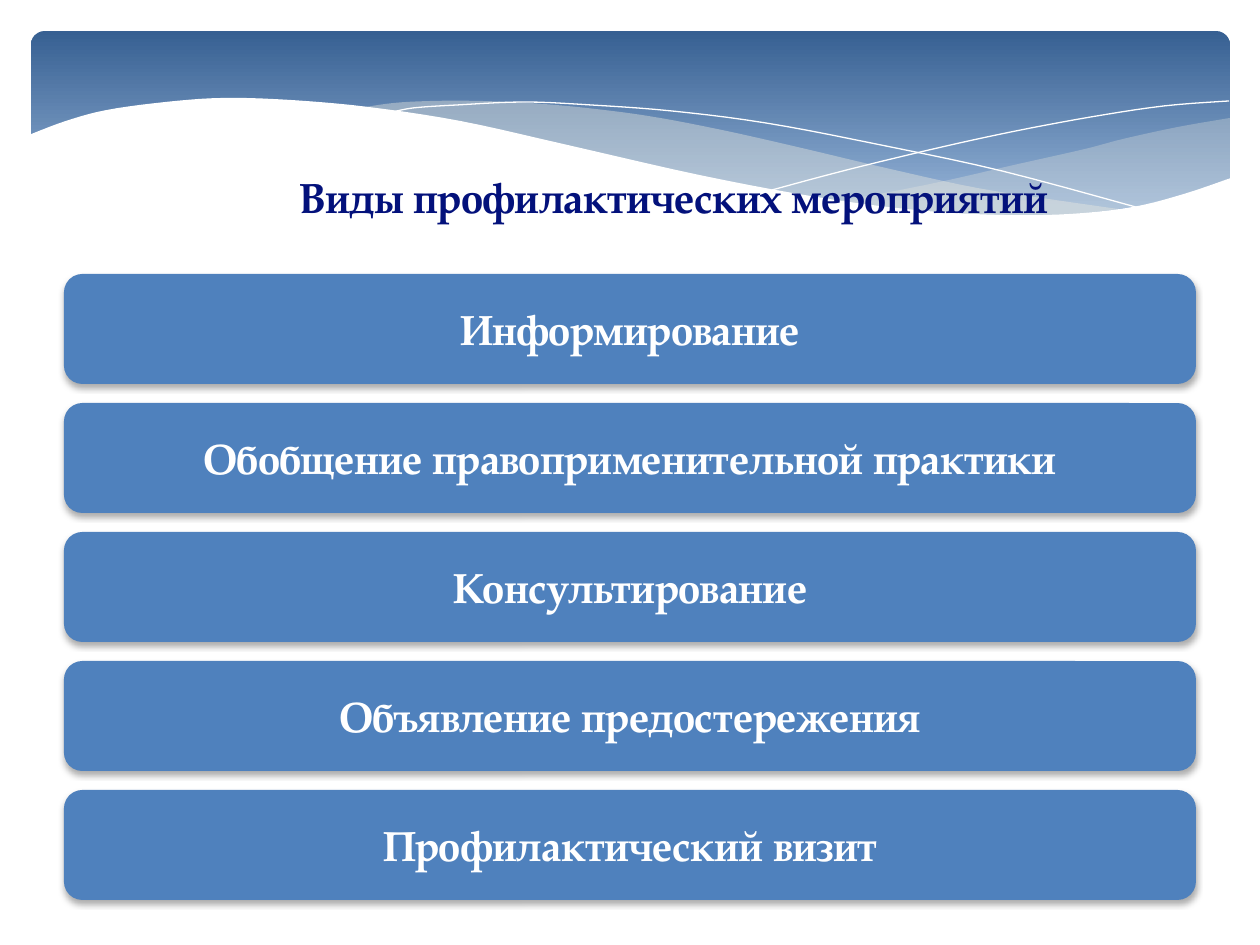
from lxml.etree import SubElement
from pptx import Presentation
from pptx.dml.color import RGBColor
from pptx.enum.shapes import MSO_SHAPE
from pptx.enum.text import MSO_ANCHOR, PP_ALIGN
from pptx.oxml.ns import qn
from pptx.util import Pt

EMU_PER_PX = 914400 / 126
FONT = "TeX Gyre Pagella"
WHITE, NAVY, BLUE, CREAM = "FFFFFF", "03117B", "4F81BD", "EEECE1"
BAND_TOP, BAND_BOTTOM = "376092", "95B3D7"

TITLE = "Виды профилактических мероприятий"
MEASURES = [
    "Информирование",
    "Обобщение правоприменительной практики",
    "Консультирование",
    "Объявление предостережения",
    "Профилактический визит",
]
CARD_LEFT, CARD_TOP, CARD_WIDTH, CARD_HEIGHT, CARD_STEP = 64, 274, 1132, 110, 129

RIGHT_WAVE_TOP = [(1230, 118), (1178, 127), (1123, 139), (1085, 149), (1014, 165),
                  (949, 180), (890, 192), (833, 202)]
RIGHT_WAVE_BOTTOM = [(833, 202), (888, 208), (954, 214), (1012, 217), (1063, 215),
                     (1110, 210), (1160, 202), (1196, 192), (1230, 178)]
MIDDLE_WAVE_TOP = [(1125, 210), (1055, 200), (977, 188), (890, 169), (793, 146),
                   (717, 129), (648, 116), (586, 108), (529, 103), (479, 101),
                   (433, 101), (394, 103), (360, 108)]
MIDDLE_WAVE_BOTTOM = [(360, 108), (431, 118), (509, 134), (566, 146), (668, 170),
                      (757, 189), (838, 203), (910, 212), (974, 217), (1031, 218),
                      (1080, 215), (1125, 210)]
FALLING_LINE = [(389, 113), (413, 108), (457, 105), (524, 102), (591, 105),
                (672, 111), (766, 123), (876, 144), (1002, 171), (1143, 209)]
RISING_LINE = [(772, 190), (847, 170), (942, 147), (1016, 131), (1091, 117),
               (1164, 106), (1229, 101)]
FRONT_WAVE_TOP = [(1231, 178), (1184, 194), (1133, 207), (1071, 214), (999, 215),
                  (915, 210), (816, 197), (699, 175), (563, 144), (460, 121),
                  (368, 107), (290, 100), (223, 98), (166, 102), (107, 110),
                  (66, 121), (29, 135)]
FRONT_WAVE_BASE = [(29, 282), (1231, 282)]


def px(length):
    return round(length * EMU_PER_PX)


def color(code):
    return RGBColor.from_string(code)


def smooth(knots, steps=5):
    """Return points on a Catmull-Rom curve through the knots."""
    padded = [knots[0], *knots, knots[-1]]
    points = [knots[0]]
    for a, b, c, d in zip(padded, padded[1:], padded[2:], padded[3:]):
        for step in range(1, steps + 1):
            t = step / steps
            points.append(tuple(
                (2 * q + (r - p) * t + (2 * p - 5 * q + 4 * r - s) * t ** 2
                 + (3 * q - p - 3 * r + s) * t ** 3) / 2
                for p, q, r, s in zip(a, b, c, d)))
    return points


def add_outline(shapes, points, closed):
    corners = [(px(x), px(y)) for x, y in points]
    builder = shapes.build_freeform(*corners[0])
    builder.add_line_segments(corners[1:], close=closed)
    outline = builder.convert_to_shape()
    outline.shadow.inherit = False
    return outline


def add_wave(shapes, points, fill, opacity=100):
    wave = add_outline(shapes, points, closed=True)
    wave.fill.solid()
    wave.fill.fore_color.rgb = color(fill)
    wave.line.fill.background()
    if opacity < 100:
        tint = wave.fill._xPr.find(".//" + qn("a:srgbClr"))
        SubElement(tint, qn("a:alpha"), val=str(opacity * 1000))


def add_hairline(shapes, points):
    hairline = add_outline(shapes, points, closed=False)
    hairline.fill.background()
    hairline.line.color.rgb = color(WHITE)
    hairline.line.width = Pt(0)


def add_rounded_box(page, left, top, width, height):
    box = page.shapes.add_shape(MSO_SHAPE.ROUNDED_RECTANGLE,
                                px(left), px(top), px(width), px(height))
    box.shadow.inherit = False
    box.line.fill.background()
    return box


def add_band(page):
    band = add_rounded_box(page, 31, 31, 1199, 197)
    band.adjustments[0] = 0.07
    band.fill.gradient()
    band.fill.gradient_angle = 270
    stops = zip(band.fill.gradient_stops, [(0, BAND_TOP), (0.9, BAND_BOTTOM)])
    for stop, (position, shade) in stops:
        stop.position = position
        stop.color.rgb = color(shade)


def add_waves(page):
    shapes = page.shapes.add_group_shape().shapes
    add_wave(shapes, smooth(RIGHT_WAVE_TOP) + smooth(RIGHT_WAVE_BOTTOM), CREAM, opacity=29)
    add_wave(shapes, smooth(MIDDLE_WAVE_TOP) + smooth(MIDDLE_WAVE_BOTTOM), CREAM, opacity=40)
    add_hairline(shapes, smooth(FALLING_LINE))
    add_hairline(shapes, smooth(RISING_LINE))
    add_wave(shapes, smooth(FRONT_WAVE_TOP) + FRONT_WAVE_BASE, WHITE)


def write_text(box, text, *, fill, size=24, bold=True, anchor=MSO_ANCHOR.TOP):
    frame = box.text_frame
    frame.word_wrap = True
    frame.vertical_anchor = anchor
    para = frame.paragraphs[0]
    para.alignment = PP_ALIGN.CENTER
    span = para.add_run()
    span.text = text
    span.font.name = FONT
    span.font.size = Pt(size)
    span.font.bold = bold
    span.font.color.rgb = color(fill)


def add_soft_shadow(box):
    effects = box._element.spPr.find(qn("a:effectLst"))
    shadow = SubElement(effects, qn("a:outerShdw"), blurRad=str(Pt(3.5)),
                        dist=str(Pt(2.2)), dir="5400000", rotWithShape="0")
    shade = SubElement(shadow, qn("a:srgbClr"), val="000000")
    SubElement(shade, qn("a:alpha"), val="32000")


def add_card(page, top, text):
    card = add_rounded_box(page, CARD_LEFT, top, CARD_WIDTH, CARD_HEIGHT)
    card.fill.solid()
    card.fill.fore_color.rgb = color(BLUE)
    add_soft_shadow(card)
    write_text(card, text, fill=WHITE, anchor=MSO_ANCHOR.MIDDLE)


def add_title(page):
    box = page.shapes.add_textbox(px(213), px(165), px(922), px(63))
    write_text(box, TITLE, fill=NAVY)


def main():
    deck = Presentation()
    deck.slide_width, deck.slide_height = px(1260), px(945)
    page = deck.slides.add_slide(deck.slide_layouts[6])
    add_band(page)
    add_waves(page)
    for row, measure in enumerate(MEASURES):
        add_card(page, CARD_TOP + row * CARD_STEP, measure)
    add_title(page)
    deck.save("out.pptx")


if __name__ == "__main__":
    main()
